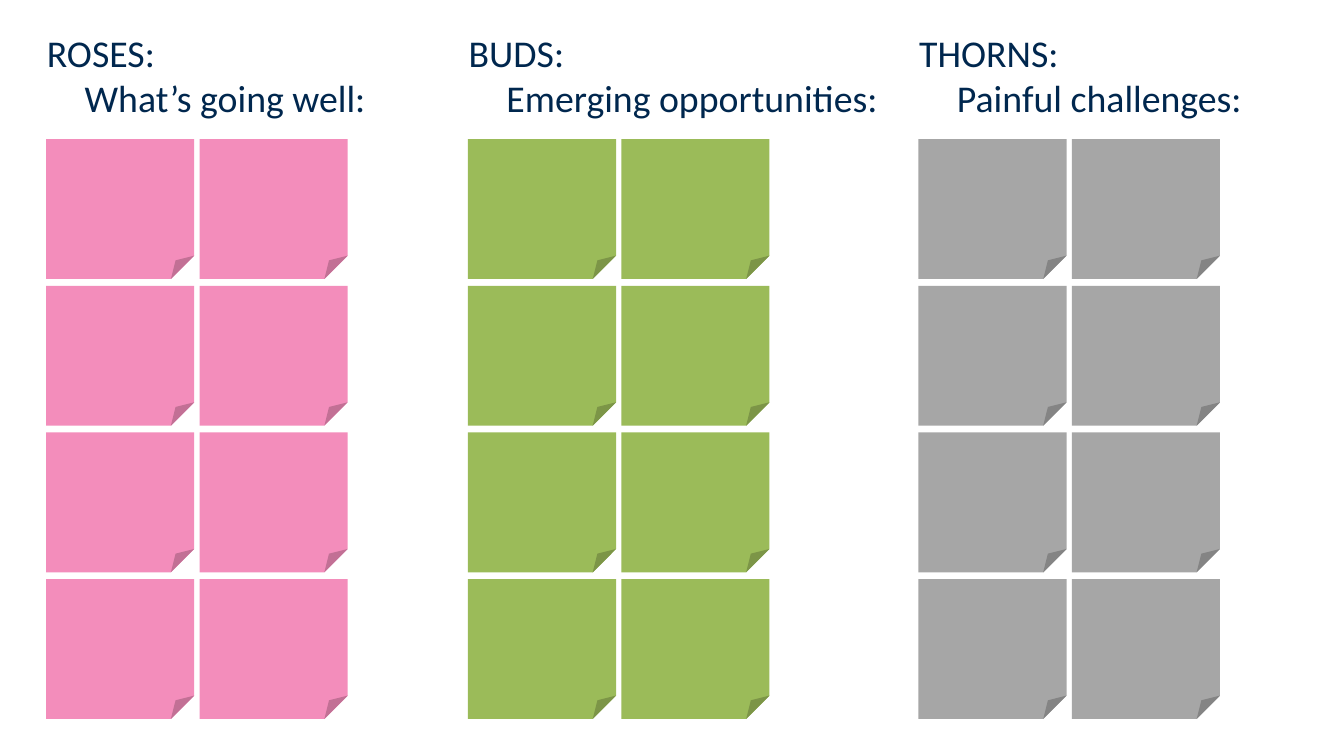
from lxml import etree
from pptx import Presentation
from pptx.dml.color import RGBColor
from pptx.enum.shapes import MSO_SHAPE
from pptx.enum.text import MSO_ANCHOR, MSO_AUTO_SIZE, PP_ALIGN
from pptx.oxml.ns import qn
from pptx.util import Pt

FOLDED = MSO_SHAPE.FOLDED_CORNER
TOP = MSO_ANCHOR.TOP
NO_FIT = MSO_AUTO_SIZE.NONE
LEFT = PP_ALIGN.LEFT

NAVY = RGBColor(0x00, 0x27, 0x4E)
PINK = RGBColor(0xF3, 0x8D, 0xBB)
GREEN = RGBColor(0x9B, 0xBB, 0x59)
GRAY = RGBColor(0xA6, 0xA6, 0xA6)

COLUMNS = [
    (61, PINK, "ROSES:", "What’s going well:"),
    (619, GREEN, "BUDS:", "Emerging opportunities:"),
    (1215, GRAY, "THORNS:", "Painful challenges:"),
]
INDENTS = (56, 106)
ROWS, COLS = 4, 2


def px(n):
    """Turn px, 100 to the inch, into EMU."""
    return n * 9144


def add_heading(sp, x, y, w, h, lines):
    """Fill a body placeholder with a title line and an indented line."""
    sp.left, sp.top, sp.width, sp.height = px(x), px(y), px(w), px(h)
    tf = sp.text_frame
    tf.text = "\n".join(lines)
    tf.word_wrap = True
    tf.auto_size = NO_FIT
    tf.vertical_anchor = TOP
    tf.margin_left = tf.margin_right = tf.margin_bottom = 0
    tf.margin_top = px(2)
    for level, p in enumerate(tf.paragraphs):
        p.level = level
        p.alignment = LEFT
        p.space_before = p.space_after = Pt(0)
        pPr = p._p.get_or_add_pPr()
        pPr.set("marL", str(px(INDENTS[level])))
        pPr.set("indent", "0")
        etree.SubElement(pPr, qn("a:buNone"))
        font = p.runs[0].font
        font.name, font.size, font.bold = "Calibri", Pt(36), False
        font.color.rgb = NAVY


def add_notes(s, x, y, w, h, color):
    """Fill the box with a grid of sticky notes."""
    note_w, note_h = 196, 185
    step_x = (w - note_w) // (COLS - 1)
    step_y = (h - note_h) // (ROWS - 1)
    for i in range(ROWS * COLS):
        row, col = divmod(i, COLS)
        sp = s.shapes.add_shape(FOLDED, px(x + col * step_x), px(y + row * step_y),
                                px(note_w), px(note_h))
        sp.shadow.inherit = False
        sp.fill.solid()
        sp.fill.fore_color.rgb = color
        sp.line.fill.background()


def main():
    """Build the slide and save it."""
    prs = Presentation()
    prs.slide_width, prs.slide_height = px(1778), px(1000)
    s = prs.slides.add_slide(prs.slide_layouts.get_by_name("Comparison"))
    title, *bodies = s.placeholders
    for (x, color, name, prompt), body in zip(COLUMNS, bodies):
        add_heading(body, x - 55, 37, 788, 123, (name, prompt))
        add_notes(s, x, 184, 399, 767, color)
    for sp in (title, *bodies[len(COLUMNS):]):
        sp.element.getparent().remove(sp.element)
    prs.save("out.pptx")


if __name__ == "__main__":
    main()
